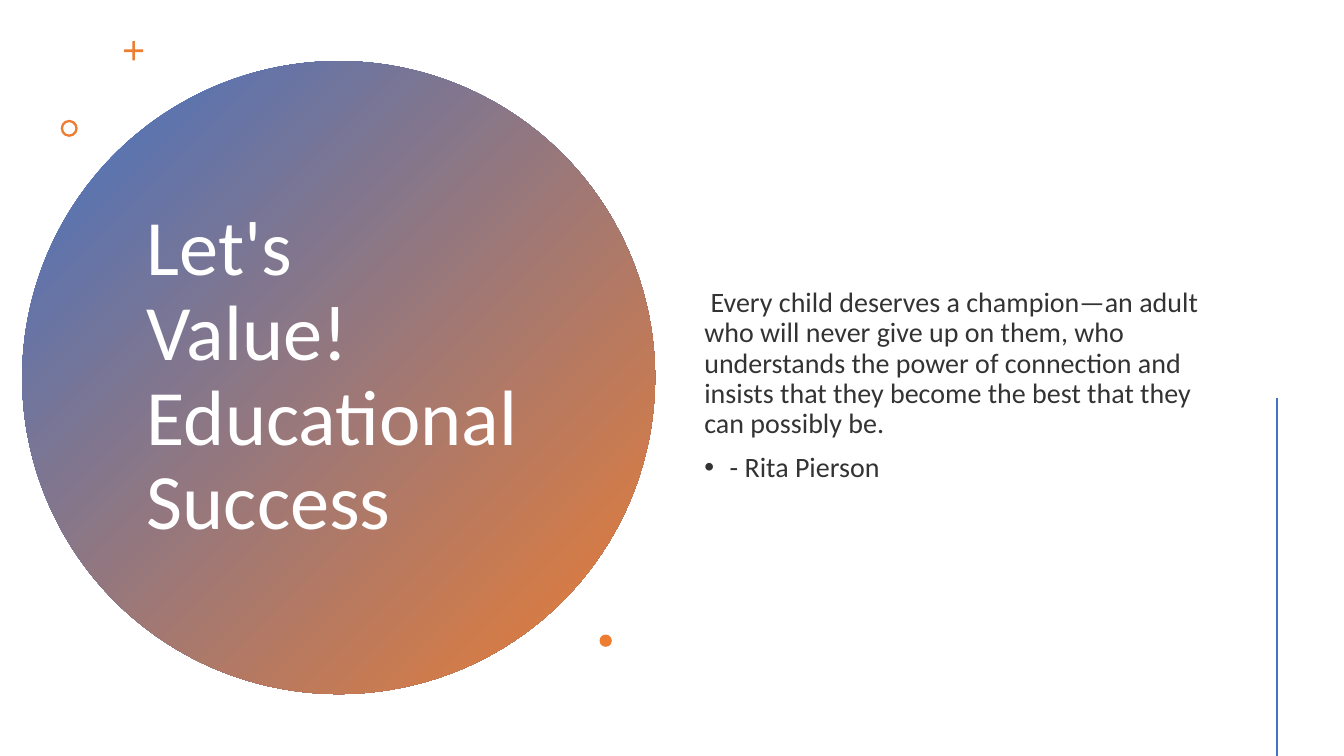
from dataclasses import dataclass

from lxml import etree
from pptx import Presentation
from pptx import util as u
from pptx.dml.color import RGBColor
from pptx.enum import shapes, text
from pptx.oxml import ns


@dataclass
class Theme:
    blue: RGBColor = RGBColor(0x44, 0x72, 0xC4)
    orange: RGBColor = RGBColor(0xED, 0x7D, 0x31)
    white: RGBColor = RGBColor(0xFF, 0xFF, 0xFF)
    ink: RGBColor = RGBColor(0x33, 0x33, 0x33)
    font: str = "Calibri"
    title_size: int = 56
    body_size: int = 20


theme = Theme()


def add_plain_shape(kind, left, top, size):
    shape = slide.shapes.add_shape(kind, u.Cm(left), u.Cm(top), u.Cm(size), u.Cm(size))
    shape.shadow.inherit = False
    shape.line.fill.background()
    shape.fill.solid()
    shape.fill.fore_color.rgb = theme.orange
    return shape


def add_text(left, top, width, height, content, size, color):
    box = slide.shapes.add_textbox(u.Cm(left), u.Cm(top), u.Cm(width), u.Cm(height))
    frame = box.text_frame
    frame.word_wrap = True
    frame.vertical_anchor = text.MSO_ANCHOR.MIDDLE
    frame.text = content
    for paragraph in frame.paragraphs:
        paragraph.line_spacing = 0.9
        for run in paragraph.runs:
            run.font.name = theme.font
            run.font.size = u.Pt(size)
            run.font.color.rgb = color
    return frame


presentation = Presentation()
presentation.slide_width = u.Cm(33.87)
presentation.slide_height = u.Cm(19.05)
slide = presentation.slides.add_slide(presentation.slide_layouts[6])

disc = add_plain_shape(shapes.MSO_SHAPE.OVAL, 0.56, 1.54, 15.95)
disc.fill.gradient()
disc.fill.gradient_angle = 315
for stop, color, position in zip(disc.fill.gradient_stops, (theme.blue, theme.orange), (0, 1)):
    stop.color.rgb = color
    stop.position = position

add_text(3.45, 3.58, 10.13, 11.86, "Let's\vValue!\vEducational\vSuccess",
         theme.title_size, theme.white)

plus = add_plain_shape(shapes.MSO_SHAPE.CROSS, 3.13, 1.04, 0.48)
plus.adjustments[0] = 0.43
ring = add_plain_shape(shapes.MSO_SHAPE.DONUT, 1.53, 3.02, 0.43)
ring.adjustments[0] = 0.14
add_plain_shape(shapes.MSO_SHAPE.OVAL, 15.11, 15.99, 0.31)

quote = add_text(
    17.5, 1.63, 13.26, 16.2,
    " Every child deserves a champion—an adult who will never give up on them, "
    "who understands the power of connection and insists that they become the best "
    "that they can possibly be.\n- Rita Pierson",
    theme.body_size, theme.ink)
author = quote.paragraphs[1]
author.space_before = u.Pt(10)
properties = author._p.get_or_add_pPr()
properties.set("marL", str(u.Cm(0.64)))
properties.set("indent", str(u.Cm(-0.64)))
etree.SubElement(properties, ns.qn("a:buFont")).set("typeface", "Arial")
etree.SubElement(properties, ns.qn("a:buChar")).set("char", "•")

accent = slide.shapes.add_connector(
    shapes.MSO_CONNECTOR.STRAIGHT, u.Cm(32.18), u.Cm(10.03), u.Cm(32.18), u.Cm(19.05))
accent.line.color.rgb = theme.blue
accent.line.width = u.Pt(2)
etree.SubElement(accent._element.spPr, ns.qn("a:effectLst"))

presentation.save("out.pptx")
